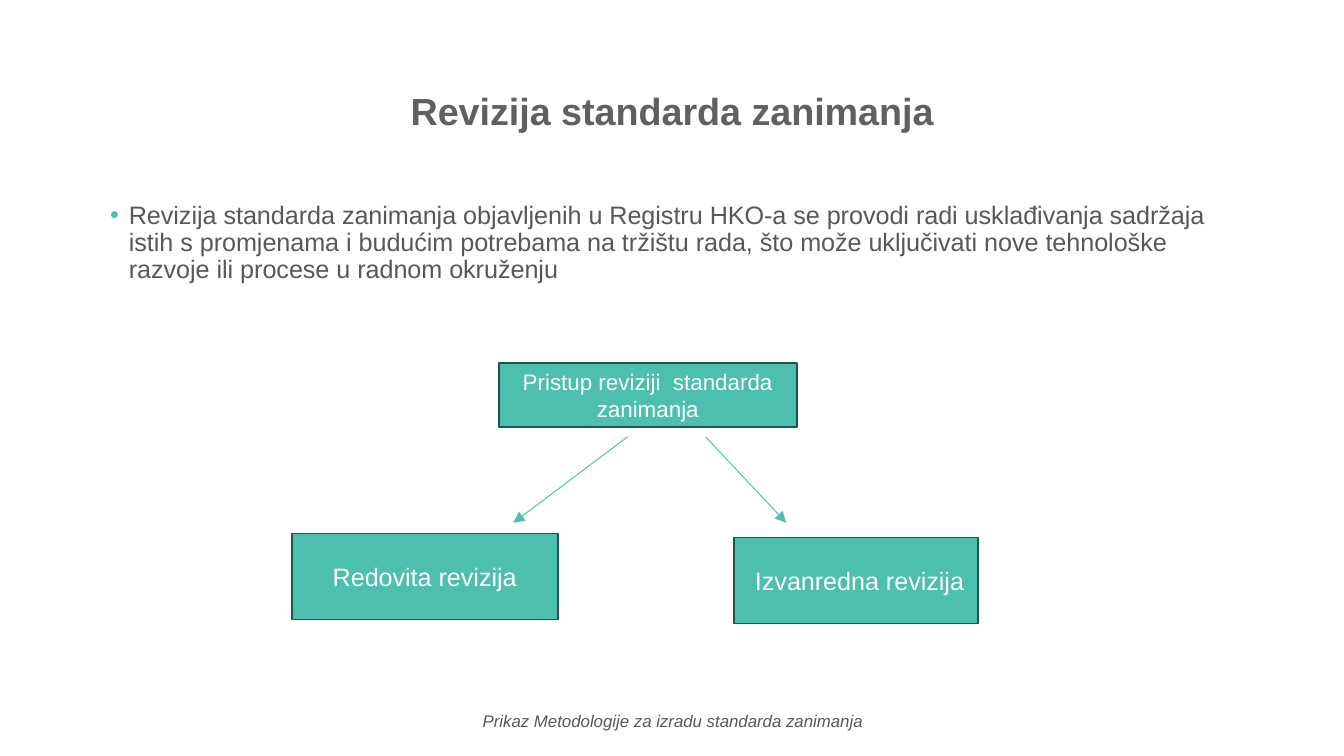
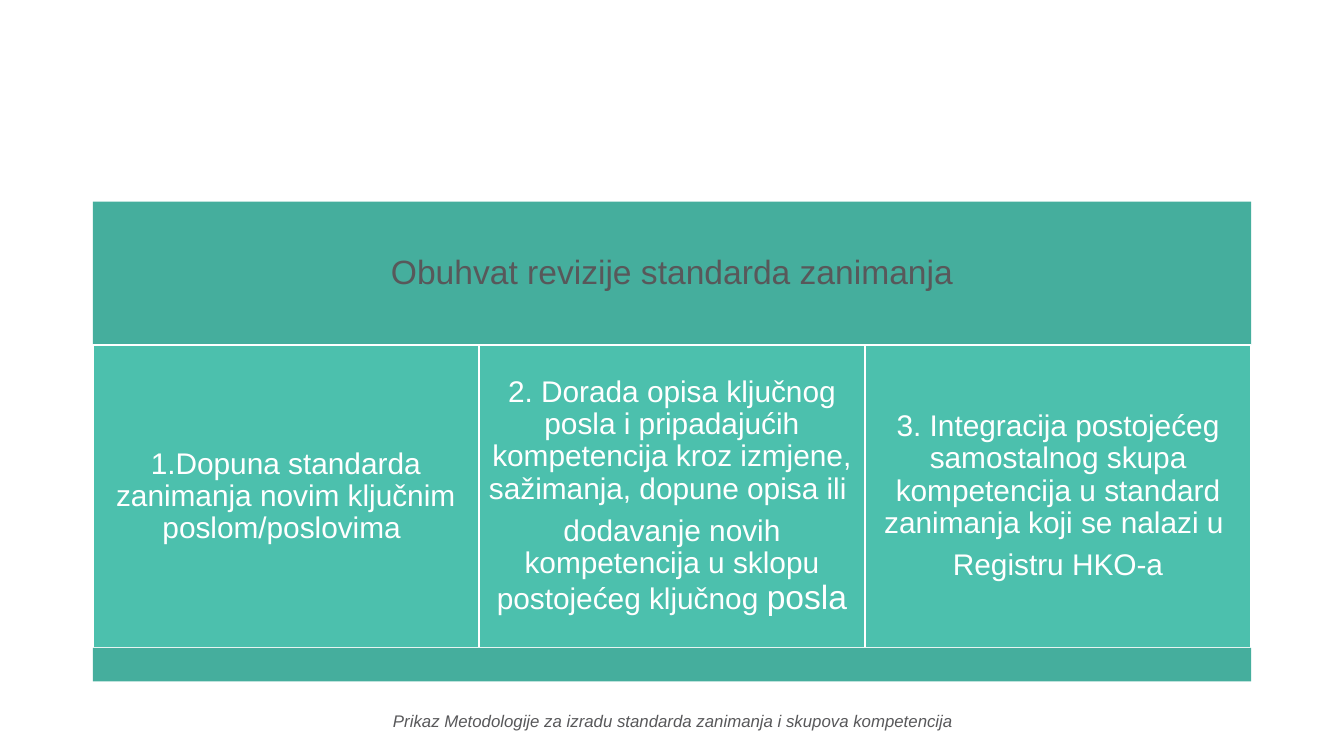
from dataclasses import dataclass

from lxml.etree import SubElement
from pptx import Presentation
from pptx.dml.color import RGBColor
from pptx.enum.shapes import MSO_CONNECTOR, MSO_SHAPE
from pptx.enum.text import MSO_ANCHOR, MSO_AUTO_SIZE, PP_ALIGN
from pptx.oxml.ns import qn
from pptx.util import Inches, Pt

FONT = "Arial"
TEAL, DARK_TEAL, OUTLINE = "4CC0AD", "45AE9D", "21544C"
GREY, TITLE_GREY, WHITE = "58585A", "606062", "FFFFFF"
SLIDE_WIDTH = 10
SLIDE_HEIGHT = SLIDE_WIDTH * 9 / 16
LEFT, WIDTH = 0.69, 8.62
COLUMN_TOP, COLUMN_HEIGHT = 2.57, 2.25


@dataclass(frozen=True)
class Run:
    text: str
    size: float


@dataclass(frozen=True)
class Box:
    left: float
    top: float
    width: float
    height: float
    text: str
    size: float


@dataclass(frozen=True)
class Arrow:
    x1: float
    y1: float
    x2: float
    y2: float


REVISION_BOXES = [
    Box(3.71, 2.7, 2.22, 0.48, "Pristup reviziji  standarda zanimanja", 12),
    Box(2.17, 3.97, 1.98, 0.64, "Redovita revizija", 13.5),
    Box(5.46, 4, 1.82, 0.64, " Izvanredna revizija", 13.5),
]
REVISION_ARROWS = [Arrow(4.67, 3.25, 3.82, 3.89), Arrow(5.25, 3.25, 5.85, 3.89)]
SCOPE_COLUMNS = [
    [[Run("1.Dopuna standarda zanimanja novim ključnim poslom/poslovima ", 16)]],
    [
        [Run("2. Dorada opisa ključnog posla i pripadajućih kompetencija "
             "kroz izmjene, sažimanja, dopune opisa ili ", 16)],
        [Run("dodavanje novih kompetencija u sklopu postojećeg ključnog ", 16),
         Run("posla", 18)],
    ],
    [
        [Run("3. Integracija postojećeg samostalnog skupa kompetencija "
             "u standard zanimanja koji se nalazi u ", 16)],
        [Run("Registru HKO-a", 16)],
    ],
]


def rgb(color: str) -> RGBColor:
    """Turn a hex string into a colour."""
    return RGBColor.from_string(color)


def add_bullet(p, color: str, indent: float) -> None:
    """Give a paragraph a coloured bullet with a hanging indent."""
    pPr = p._p.get_or_add_pPr()
    pPr.set("marL", str(Inches(indent)))
    pPr.set("indent", str(-Inches(indent)))
    SubElement(SubElement(pPr, qn("a:buClr")), qn("a:srgbClr"), val=color)
    SubElement(pPr, qn("a:buFont"), typeface=FONT)
    SubElement(pPr, qn("a:buChar"), char="•")


def write(sp, paragraphs: list[list[Run]], *, color: str = WHITE, bold: bool = False,
          italic: bool = False, align=PP_ALIGN.CENTER, anchor=MSO_ANCHOR.MIDDLE,
          spacing: float = 1.0, after: float = 0, inset: float | None = None,
          bullet: str | None = None) -> None:
    """Fill a shape with formatted paragraphs."""
    tf = sp.text_frame
    tf.word_wrap = True
    tf.auto_size = MSO_AUTO_SIZE.NONE
    tf.vertical_anchor = anchor
    if inset is not None:
        tf.margin_left = tf.margin_right = Inches(inset)
        tf.margin_top = tf.margin_bottom = Inches(inset)
    for i, runs in enumerate(paragraphs):
        p = tf.add_paragraph() if i else tf.paragraphs[0]
        if bullet:
            add_bullet(p, bullet, 0.14)
        p.alignment = align
        p.line_spacing = spacing
        p.space_before = Pt(0)
        p.space_after = Pt(after)
        for run in runs:
            r = p.add_run()
            r.text = run.text
            r.font.name = FONT
            r.font.size = Pt(run.size)
            r.font.bold = bold
            r.font.italic = italic
            r.font.color.rgb = rgb(color)


def add_rect(s, left: float, top: float, width: float, height: float,
             fill: str, line: str | None = None):
    """Add a flat rectangle with an optional outline."""
    sp = s.shapes.add_shape(MSO_SHAPE.RECTANGLE, Inches(left), Inches(top),
                            Inches(width), Inches(height))
    sp.shadow.inherit = False
    sp.fill.solid()
    sp.fill.fore_color.rgb = rgb(fill)
    if line:
        sp.line.color.rgb = rgb(line)
        sp.line.width = Pt(1)
    else:
        sp.line.fill.background()
    return sp


def add_text_box(s, left: float, top: float, width: float, height: float):
    """Add an empty text box."""
    return s.shapes.add_textbox(Inches(left), Inches(top), Inches(width), Inches(height))


def add_arrow(s, arrow: Arrow) -> None:
    """Draw a thin line with a triangle at its end."""
    cx = s.shapes.add_connector(MSO_CONNECTOR.STRAIGHT, Inches(arrow.x1), Inches(arrow.y1),
                                Inches(arrow.x2), Inches(arrow.y2))
    cx.line.color.rgb = rgb(TEAL)
    cx.line.width = Pt(0.5)
    SubElement(cx.line._get_or_add_ln(), qn("a:tailEnd"), type="triangle")
    SubElement(cx._element.spPr, qn("a:effectLst"))


def add_footer(s, text: str) -> None:
    """Write the centred footer line."""
    write(add_text_box(s, 2.26, 5.21, 5.49, 0.3), [[Run(text, 9)]], color=GREY, italic=True)


def build_revision(prs) -> None:
    """Build the slide on the two kinds of revision."""
    s = prs.slides.add_slide(prs.slide_layouts[5])
    title = s.shapes.title
    title.left, title.top = Inches(LEFT), Inches(0.3)
    title.width, title.height = Inches(WIDTH), Inches(1.09)
    write(title, [[Run("Revizija standarda zanimanja", 20.2)]],
          color=TITLE_GREY, bold=True, spacing=0.9)
    body = add_text_box(s, 0.72, 1.46, WIDTH, 3.57)
    write(body, [[Run("Revizija standarda zanimanja objavljenih u Registru HKO-a se provodi "
                      "radi usklađivanja sadržaja istih s promjenama i budućim potrebama na "
                      "tržištu rada, što može uključivati nove tehnološke razvoje ili procese "
                      "u radnom okruženju", 13.5)]],
          color=GREY, align=PP_ALIGN.LEFT, anchor=MSO_ANCHOR.TOP, spacing=0.9, bullet=TEAL)
    for box in REVISION_BOXES:
        sp = add_rect(s, box.left, box.top, box.width, box.height, TEAL, OUTLINE)
        write(sp, [[Run(box.text, box.size)]])
    for arrow in REVISION_ARROWS:
        add_arrow(s, arrow)
    add_footer(s, "Prikaz Metodologije za izradu standarda zanimanja")


def build_scope(prs) -> None:
    """Build the slide on the scope of a revision."""
    s = prs.slides.add_slide(prs.slide_layouts[6])
    header = add_rect(s, LEFT, 1.5, WIDTH, COLUMN_TOP - 1.5, DARK_TEAL)
    write(header, [[Run("Obuhvat revizije standarda zanimanja", 18)]],
          color=GREY, spacing=0.9, after=6.3, inset=0.07)
    column_width = WIDTH / len(SCOPE_COLUMNS)
    for i, paragraphs in enumerate(SCOPE_COLUMNS):
        sp = add_rect(s, LEFT + i * column_width, COLUMN_TOP, column_width, COLUMN_HEIGHT,
                      TEAL, WHITE)
        write(sp, paragraphs, spacing=0.9, after=5.6, inset=0.07)
    add_rect(s, LEFT, COLUMN_TOP + COLUMN_HEIGHT, WIDTH, 0.25, DARK_TEAL)
    add_footer(s, "Prikaz Metodologije za izradu standarda zanimanja i skupova kompetencija")


def main() -> None:
    """Build and save the presentation."""
    prs = Presentation()
    prs.slide_width, prs.slide_height = Inches(SLIDE_WIDTH), Inches(SLIDE_HEIGHT)
    build_revision(prs)
    build_scope(prs)
    prs.save("out.pptx")


if __name__ == "__main__":
    main()
